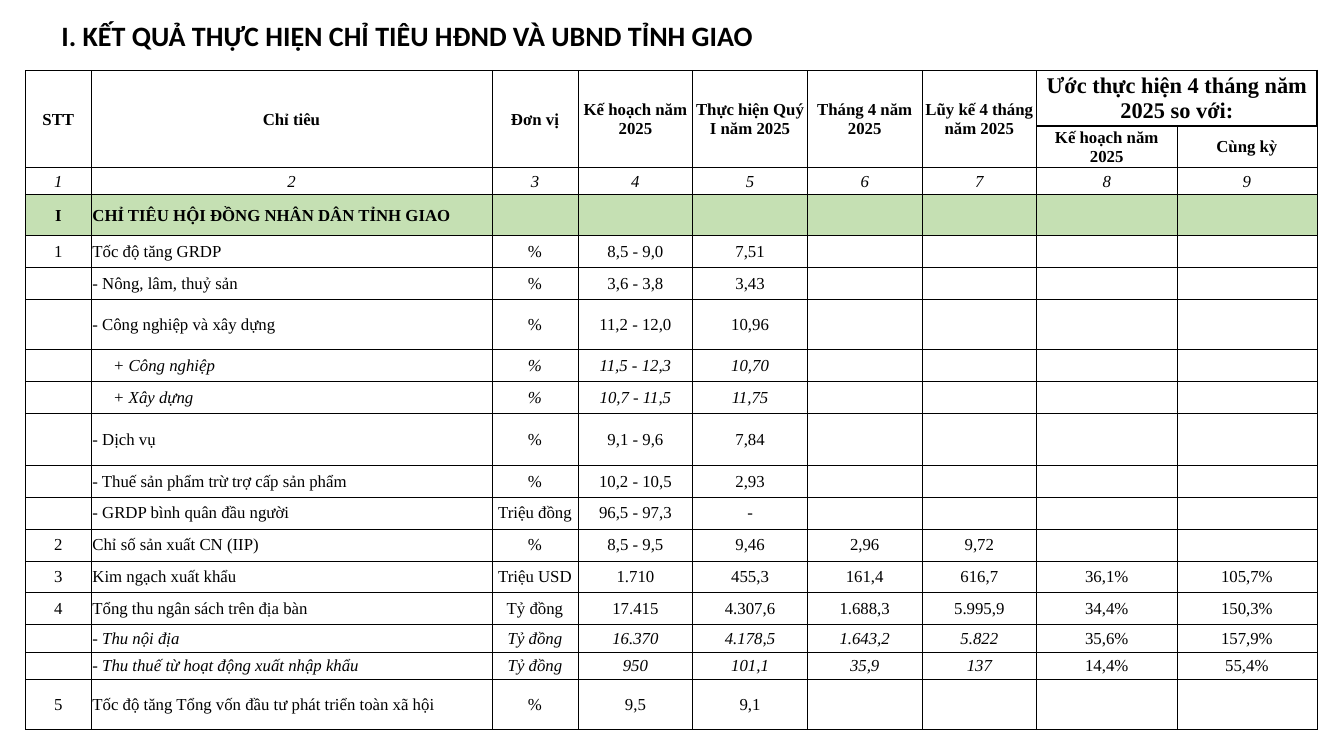
from dataclasses import dataclass

from lxml.etree import SubElement
from pptx import Presentation
from pptx.dml.color import RGBColor
from pptx.enum.text import MSO_ANCHOR, MSO_AUTO_SIZE, PP_ALIGN
from pptx.oxml.ns import qn
from pptx.util import Inches, Pt

BLACK = "000000"
GREEN = "C5E0B3"
SERIF = "Times New Roman"
NAME_COLUMN = 1
COMPARED_COLUMN = 7
HEADER_ROWS = 3
COLUMN_SHARES = (4.88, 29.82, 6.42) + (8.53,) * 4 + (10.43,) * 2

deck = Presentation()
deck.slide_width = Inches(13.33)
deck.slide_height = Inches(7.5)


@dataclass(frozen=True)
class Row:
    height: float
    texts: tuple[str, ...]
    bold: bool = False
    italic_columns: int = 0
    indent: float = 0.1
    fill: str | None = None


NORMAL, SHORT, TALL = 4.23, 3.6, 6.65
PLAN = "Kế hoạch năm 2025"
ROWS = (
    Row(7.33, ("STT", "Chỉ tiêu", "Đơn vị", PLAN, "Thực hiện Quý I năm 2025", "Tháng 4 năm 2025",
               "Lũy kế 4 tháng năm 2025", "Ước thực hiện 4 tháng năm 2025 so với:"), bold=True),
    Row(5.5, ("",) * COMPARED_COLUMN + (PLAN, "Cùng kỳ"), bold=True),
    Row(SHORT, tuple(str(number) for number in range(1, 10)), italic_columns=9),
    Row(5.42, ("I", "CHỈ TIÊU HỘI ĐỒNG NHÂN DÂN TỈNH GIAO"), bold=True, fill=GREEN),
    Row(NORMAL, ("1", "Tốc độ tăng GRDP", "%", "8,5 - 9,0", "7,51")),
    Row(NORMAL, ("", "- Nông, lâm, thuỷ sản", "%", "3,6 - 3,8", "3,43")),
    Row(TALL, ("", "- Công nghiệp và xây dựng", "%", "11,2 - 12,0", "10,96")),
    Row(NORMAL, ("", "+ Công nghiệp", "%", "11,5 - 12,3", "10,70"), italic_columns=9, indent=1.65),
    Row(NORMAL, ("", "+ Xây dựng", "%", "10,7 - 11,5", "11,75"), italic_columns=9, indent=1.65),
    Row(6.8, ("", "- Dịch vụ", "%", "9,1 - 9,6", "7,84")),
    Row(NORMAL, ("", "- Thuế sản phẩm trừ trợ cấp sản phẩm", "%", "10,2 - 10,5", "2,93")),
    Row(NORMAL, ("", "- GRDP bình quân đầu người", "Triệu đồng", "96,5 - 97,3", "-")),
    Row(NORMAL, ("2", "Chỉ số sản xuất CN (IIP)", "%", "8,5 - 9,5", "9,46", "2,96", "9,72")),
    Row(NORMAL, ("3", "Kim ngạch xuất khẩu", "Triệu USD", "1.710", "455,3", "161,4", "616,7",
                 "36,1%", "105,7%")),
    Row(NORMAL, ("4", "Tổng thu ngân sách trên địa bàn", "Tỷ đồng", "17.415", "4.307,6", "1.688,3",
                 "5.995,9", "34,4%", "150,3%")),
    Row(SHORT, ("", "- Thu nội địa", "Tỷ đồng", "16.370", "4.178,5", "1.643,2", "5.822",
                "35,6%", "157,9%"), italic_columns=COMPARED_COLUMN),
    Row(SHORT, ("", "- Thu thuế từ hoạt động xuất nhập khẩu", "Tỷ đồng", "950", "101,1", "35,9",
                "137", "14,4%", "55,4%"), italic_columns=COMPARED_COLUMN),
    Row(TALL, ("5", "Tốc độ tăng Tổng vốn đầu tư phát triển toàn xã hội", "%", "9,5", "9,1")),
)


def across(percent: float) -> int:
    return round(deck.slide_width * percent / 100)


def down(percent: float) -> int:
    return round(deck.slide_height * percent / 100)


def color(value: str) -> RGBColor:
    return RGBColor.from_string(value)


def write(frame, text: str, *, font: str = SERIF, size: float = 12, bold: bool = False,
          italic: bool = False, align: PP_ALIGN = PP_ALIGN.LEFT) -> None:
    para = frame.paragraphs[0]
    para.alignment = align
    if not text:
        para._p.get_or_add_endParaRPr().set("sz", str(round(size * 100)))
        return
    span = para.add_run()
    span.text = text
    span.font.name = font
    span.font.size = Pt(size)
    span.font.bold = bold
    span.font.italic = italic
    span.font.color.rgb = color(BLACK)


def border_width(row: int, column: int, edge: str) -> float:
    compared = column >= COMPARED_COLUMN
    heading = row == 0 and compared
    beside = row == 0 and column == COMPARED_COLUMN - 1 and edge == "R"
    below = row == 1 and compared and edge == "T"
    return 1 if heading or beside or below else 0.5


def draw_borders(cell, row: int, column: int) -> None:
    properties = cell._tc.get_or_add_tcPr()
    for edge in "LRTB":
        line = SubElement(properties, qn(f"a:ln{edge}"), w=str(Pt(border_width(row, column, edge))))
        solid = SubElement(line, qn("a:solidFill"))
        SubElement(solid, qn("a:srgbClr"), val=BLACK)


def fill_cell(cell, record: Row, row: int, column: int) -> None:
    named = column == NAME_COLUMN and row >= HEADER_ROWS
    cell.vertical_anchor = MSO_ANCHOR.MIDDLE
    cell.margin_left = across(record.indent if named else 0.1)
    cell.margin_right = across(0.1)
    cell.margin_top = down(0.1)
    cell.margin_bottom = 0
    draw_borders(cell, row, column)
    if record.fill:
        cell.fill.solid()
        cell.fill.fore_color.rgb = color(record.fill)
    else:
        cell.fill.background()
    write(cell.text_frame, record.texts[column] if column < len(record.texts) else "",
          size=16 if row == 0 and column == COMPARED_COLUMN else 12,
          bold=record.bold, italic=column < record.italic_columns,
          align=PP_ALIGN.LEFT if named else PP_ALIGN.CENTER)


def draw_title(page) -> None:
    box = page.shapes.add_textbox(across(3.83), down(1.73), across(71.93), down(5.87))
    box.text_frame.word_wrap = True
    box.text_frame.auto_size = MSO_AUTO_SIZE.SHAPE_TO_FIT_TEXT
    write(box.text_frame, "I. KẾT QUẢ THỰC HIỆN CHỈ TIÊU HĐND VÀ UBND TỈNH GIAO",
          font="Calibri", size=20, bold=True)


def draw_table(page) -> None:
    height = sum(record.height for record in ROWS)
    table = page.shapes.add_table(len(ROWS), len(COLUMN_SHARES), across(1.9), down(9.33),
                                  across(sum(COLUMN_SHARES)), down(height)).table
    table.first_row = False
    table.horz_banding = False
    for column, share in enumerate(COLUMN_SHARES):
        table.columns[column].width = across(share)
    for row, record in enumerate(ROWS):
        table.rows[row].height = down(record.height)
        for column in range(len(COLUMN_SHARES)):
            fill_cell(table.cell(row, column), record, row, column)
    for column in range(COMPARED_COLUMN):
        table.cell(0, column).merge(table.cell(1, column))
    table.cell(0, COMPARED_COLUMN).merge(table.cell(0, COMPARED_COLUMN + 1))


def main() -> None:
    page = deck.slides.add_slide(deck.slide_layouts[6])
    draw_title(page)
    draw_table(page)
    deck.save("out.pptx")


if __name__ == "__main__":
    main()
